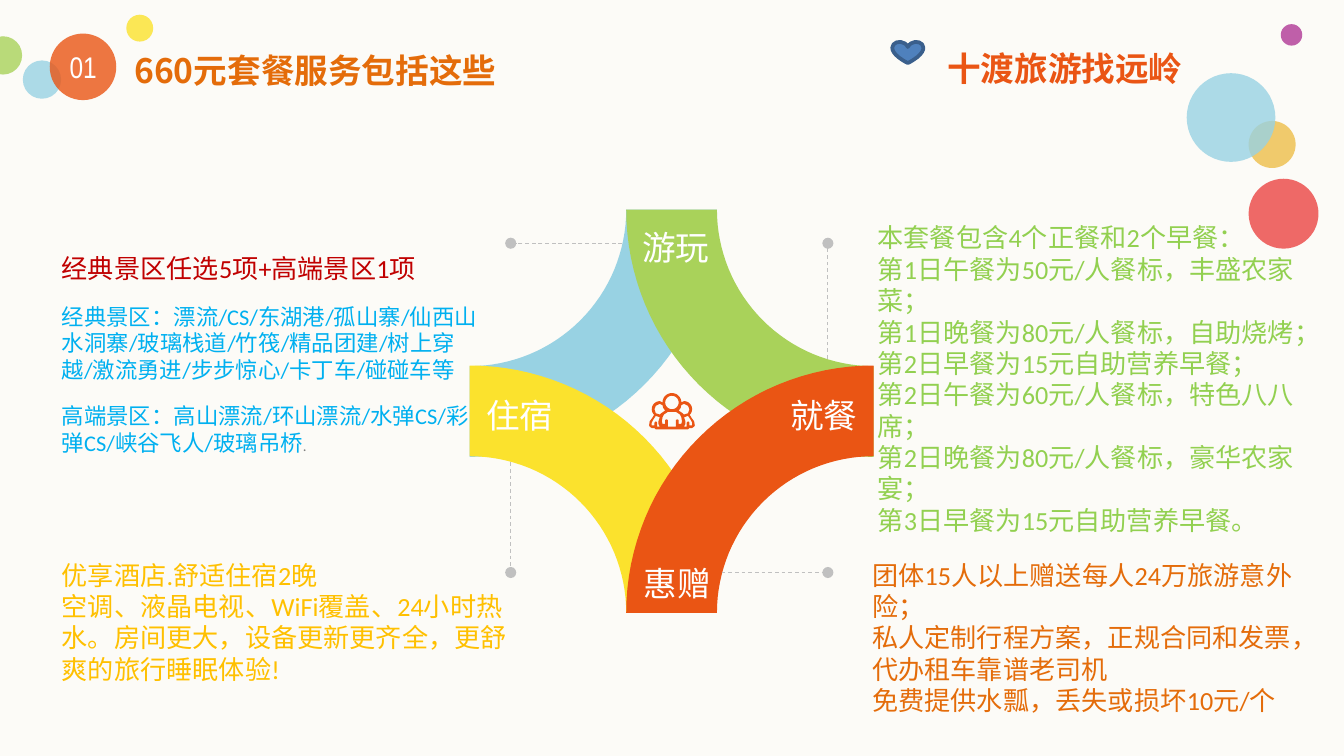
from dataclasses import dataclass
from math import cos, pi, sin

from lxml.etree import SubElement
from pptx import Presentation
from pptx.dml.color import RGBColor
from pptx.enum.dml import MSO_LINE
from pptx.enum.shapes import MSO_CONNECTOR, MSO_SHAPE
from pptx.enum.text import PP_ALIGN
from pptx.oxml.ns import qn
from pptx.util import Inches, Pt


@dataclass(frozen=True)
class Theme:
    paper: str = "FCFBF7"
    white: str = "FFFFFF"
    grey: str = "C0C0C0"
    dot: str = "7F7F7F"
    blue: str = "98D2E3"
    yellow: str = "FBE22D"
    green: str = "A9D25A"
    orange: str = "EA5514"
    purple: str = "B03896"
    sand: str = "F0CA6C"
    coral: str = "EB4544"
    heart: str = "4F81BD"
    heart_line: str = "3A5F8C"
    title: str = "E46C0A"
    meals: str = "92D050"
    hotel: str = "FFC000"
    sights: str = "C00000"
    sight_list: str = "00B0F0"
    head: int = 18
    number: int = 16
    body: int = 14
    small: int = 12
    tiny: int = 8
    gap: int = 10
    latin: str = "Calibri"
    narrow: str = "Arial Narrow"
    cjk: str = "Noto Sans CJK JP"


def arc(cx, cy, radius, start, sweep, steps=32):
    """Return points along a circular arc."""
    turn = [start + sweep * i / steps for i in range(steps + 1)]
    return [(cx + radius * cos(a), cy + radius * sin(a)) for a in turn]


def mirror(points):
    """Return the points flipped left to right, in reverse order."""
    return [(-x, y) for x, y in reversed(points)]


class Board:
    """Draws styled elements on one slide, in grid units of a tenth of an inch."""

    def __init__(self, prs, theme):
        self.theme = theme
        self.slide = prs.slides.add_slide(prs.slide_layouts[6])
        self.slide.background.fill.solid()
        self.slide.background.fill.fore_color.rgb = RGBColor.from_string(theme.paper)

    def grid(self, *units):
        return [Inches(u / 10) for u in units]

    def paint(self, s, fill, line=None, width=0, alpha=100):
        s.shadow.inherit = False
        s.fill.solid()
        s.fill.fore_color.rgb = RGBColor.from_string(fill)
        if alpha < 100:
            color = s._element.spPr.find(qn("a:solidFill"))[0]
            SubElement(color, qn("a:alpha"), val=str(alpha * 1000))
        if line:
            s.line.color.rgb = RGBColor.from_string(line)
            s.line.width = Pt(width)
        else:
            s.line.fill.background()

    def shape(self, kind, x, y, w, h, fill, **look):
        s = self.slide.shapes.add_shape(kind, *self.grid(x, y, w, h))
        self.paint(s, fill, **look)

    def outline(self, contours, fill, x=0, y=0):
        first, *others = [[self.grid(x + px, y + py) for px, py in c] for c in contours]
        builder = self.slide.shapes.build_freeform(*first[0])
        builder.add_line_segments(first[1:])
        for points in others:
            builder.move_to(*points[0])
            builder.add_line_segments(points[1:])
        self.paint(builder.convert_to_shape(), fill)

    def petal(self, cx, cy, start, inner, outer, fill):
        rim = arc(cx, cy, outer, start, pi / 2)
        self.outline([rim + arc(cx, cy, inner, start + pi / 2, -pi / 2)], fill)

    def people(self, cx, top):
        rim = arc(0, 0.7, 0.7, -pi / 2, pi / 2, 12) + arc(0.9, 1.2, 0.6, -pi / 2, pi * 0.75, 12)
        rim += [(1.5, 1.9), (1.65, 2.1), (1.7, 2.4), (1.65, 2.5), (1.5, 2.6), (1.3, 2.6), (1.2, 2.7)]
        body = [(0.3, 1.4), (0.6, 1.6), (0.7, 1.8), (0.75, 2.1), (0.7, 2.3), (0.5, 2.3),
                (0.5, 2), (0.4, 1.95), (0.3, 2), (0.3, 2.5)]
        face = [(0.7, 0.9), (0.9, 0.8), (1.2, 0.95), (1.3, 1.2), (1.2, 1.5), (0.9, 1.6),
                (0.8, 1.5), (0.5, 1.3), (0.65, 1.1)]
        side = [(1.1, 2.5), (1.1, 2.2), (1.2, 2.1), (1.3, 2.2), (1.3, 2.4), (1.5, 2.4),
                (1.5, 2.2), (1.4, 2), (1.2, 1.7), (0.9, 1.8), (1, 2.1), (1, 2.3), (0.9, 2.5)]
        contours = [rim + mirror(rim), body + mirror(body), arc(0, 0.7, 0.5, 0, 2 * pi),
                    face, mirror(face), side, mirror(side)]
        self.outline(contours, self.theme.orange, cx, top)

    def leader(self, x1, y1, x2, y2):
        s = self.slide.shapes.add_connector(MSO_CONNECTOR.STRAIGHT, *self.grid(x1, y1, x2, y2))
        s.line.color.rgb = RGBColor.from_string(self.theme.grey)
        s.line.width = Pt(0.5)
        s.line.dash_style = MSO_LINE.DASH
        SubElement(s.line._get_or_add_ln(), qn("a:tailEnd"), type="oval", w="med", len="med")
        SubElement(s._element.spPr, qn("a:effectLst"))

    def style(self, r, size, color, font=None, bold=False):
        r.font.name = font or self.theme.latin
        r.font.size = Pt(size)
        r.font.bold = bold
        r.font.color.rgb = RGBColor.from_string(color)
        SubElement(r._r.get_or_add_rPr(), qn("a:ea"), typeface=self.theme.cjk)

    def text(self, x, y, w, h, text, size, color, font=None, bold=False, inset=False, align=None):
        sp = self.slide.shapes.add_textbox(*self.grid(x, y, w, h))
        tf = sp.text_frame
        tf.word_wrap = not inset
        if not inset:
            tf.margin_left = tf.margin_right = tf.margin_top = tf.margin_bottom = 0
        tf.text = text
        for p in tf.paragraphs:
            p.alignment = align
            p._p.get_or_add_pPr().set("hangingPunct", "0")
            for r in p.runs:
                self.style(r, size, color, font, bold)
        return tf


def main():
    t = Theme()
    prs = Presentation()
    prs.slide_width = Inches(10)
    prs.slide_height = prs.slide_width * 9 // 16
    b = Board(prs, t)

    left, right, top, bottom = 34.95, 65, 15.6, 45.6
    for cx, cy, start, fill in (
        (left, top, 0, t.blue),
        (left, bottom, -pi / 2, t.yellow),
        (right, top, pi / 2, t.green),
        (right, bottom, pi, t.orange),
    ):
        b.petal(cx, cy, start, 11.65, 18.4, fill)
    b.people(50, 29.25)

    for ends in ((46.3, 18.1, 38, 18.1), (38, 34.4, 38, 42.6),
                 (53.7, 42.6, 61.6, 42.6), (61.6, 26.7, 61.6, 18.1)):
        b.leader(*ends)

    b.text(65.3, 16.5, 33.6, 16.5,
           "本套餐包含4个正餐和2个早餐：\n"
           "第1日午餐为50元/人餐标，丰盛农家菜；\n"
           "第1日晚餐为80元/人餐标，自助烧烤；第2日早餐为15元自助营养早餐；\n"
           "第2日午餐为60元/人餐标，特色八八席；\n"
           "第2日晚餐为80元/人餐标，豪华农家宴；\v第3日早餐为15元自助营养早餐。",
           t.body, t.meals)
    b.text(64.9, 41.6, 34.8, 11.8,
           "团体15人以上赠送每人24万旅游意外险；\n"
           "私人定制行程方案，正规合同和发票，代办租车靠谱老司机\n"
           "免费提供水瓢，丢失或损坏10元/个",
           t.body, t.title)

    for x, y, size, fill, alpha in (
        (9.4, 1.1, 2, t.yellow, 80),
        (-1.2, 2.7, 2.85, t.green, 80),
        (1.7, 4.5, 2.85, t.blue, 80),
        (3.7, 2.5, 4.95, t.orange, 80),
    ):
        b.shape(MSO_SHAPE.OVAL, x, y, size, size, fill, alpha=alpha)

    b.text(4.4, 3.6, 3.6, 2.7, "01", t.number, t.white, t.narrow, align=PP_ALIGN.CENTER)
    b.text(10, 3.7, 30.4, 3, "660元套餐服务包括这些", t.head, t.title, t.cjk, bold=True)
    for x, y, label in ((46.8, 16.4, "游玩"), (57.8, 28.9, "就餐"),
                        (35.2, 28.9, "住宿"), (46.9, 41.4, "惠赠")):
        b.text(x, y, 7.1, 4, label, t.head, t.white, inset=True)

    for x, y, size, fill, alpha in (
        (95.3, 1.8, 1.6, t.purple, 80),
        (92.9, 9, 3.5, t.sand, 100),
        (92.9, 13.3, 5.2, t.coral, 80),
        (88.3, 5.45, 6.6, t.blue, 80),
    ):
        b.shape(MSO_SHAPE.OVAL, x, y, size, size, fill, alpha=alpha)

    b.text(69.5, 3.1, 20.3, 4, "十渡旅游找远岭", t.head, t.orange, bold=True, inset=True)
    b.shape(MSO_SHAPE.HEART, 66.4, 3.1, 2.3, 1.6, t.heart, line=t.heart_line, width=2)

    b.text(4.6, 41.6, 33.4, 9.4,
           "优享酒店.舒适住宿2晚\n"
           "空调、液晶电视、WiFi覆盖、24小时热水。房间更大，设备更新更齐全，更舒爽的旅行睡眠体验!",
           t.body, t.hotel)
    tf = b.text(4.6, 18.8, 31.2, 15.1,
                "经典景区任选5项+高端景区1项\n"
                "经典景区：漂流/CS/东湖港/孤山寨/仙西山水洞寨/玻璃栈道/竹筏/精品团建/"
                "树上穿越/激流勇进/步步惊心/卡丁车/碰碰车等\n"
                "高端景区：高山漂流/环山漂流/水弹CS/彩弹CS/峡谷飞人/玻璃吊桥",
                t.small, t.sight_list)
    heading, *details = tf.paragraphs
    heading.runs[0].font.size = Pt(t.body)
    heading.runs[0].font.color.rgb = RGBColor.from_string(t.sights)
    for p in details:
        p.space_before = Pt(t.gap)
    r = details[-1].add_run()
    r.text = "."
    b.style(r, t.tiny, t.dot)

    prs.save("out.pptx")


if __name__ == "__main__":
    main()
